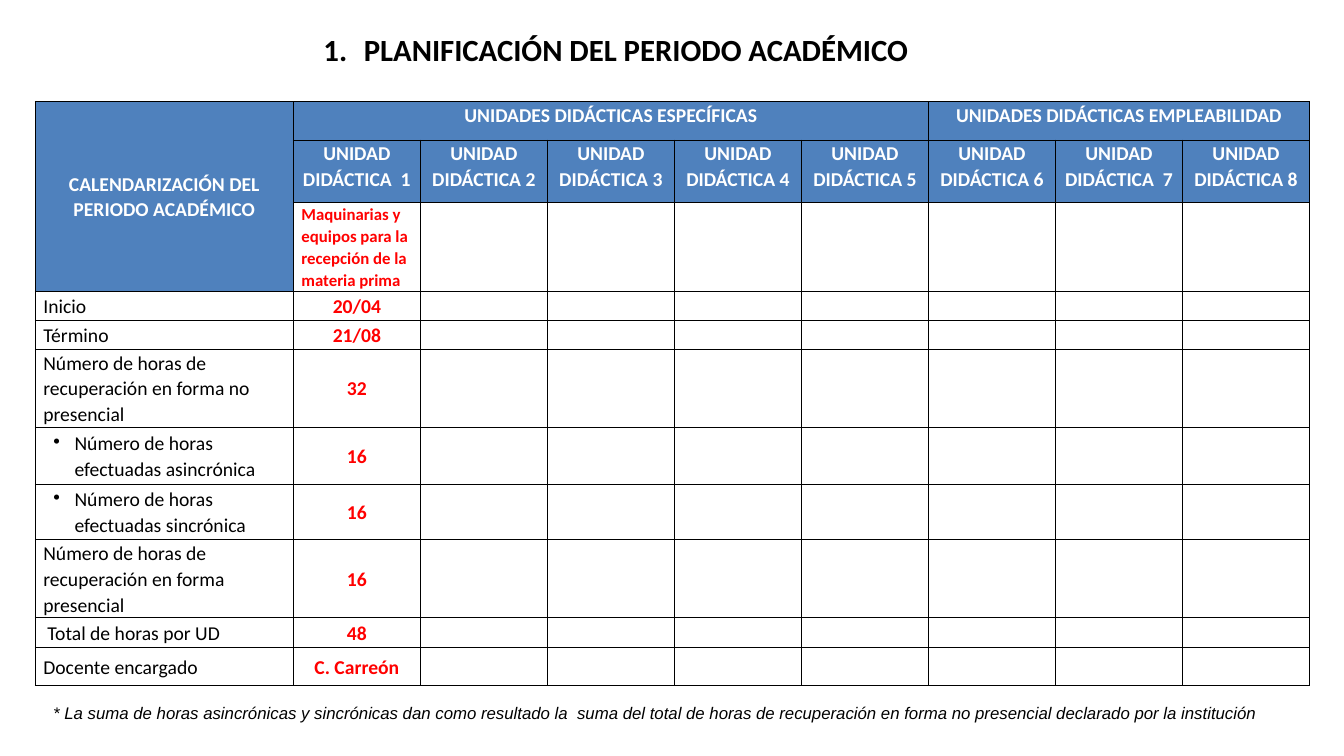
from dataclasses import dataclass
from typing import Optional

from lxml import etree
from pptx import Presentation
from pptx.dml.color import RGBColor
from pptx.enum.text import MSO_ANCHOR, PP_ALIGN
from pptx.oxml.ns import qn
from pptx.util import Inches, Pt

TOP, MIDDLE = MSO_ANCHOR.TOP, MSO_ANCHOR.MIDDLE
LEFT, CENTER, JUSTIFY = PP_ALIGN.LEFT, PP_ALIGN.CENTER, PP_ALIGN.JUSTIFY

COLORS = {"header": "4F81BD", "white": "FFFFFF", "black": "000000", "red": "FF0000"}
UNIT_COUNT = 8
SPECIFIC_COUNT = 5
HEADER_HEIGHTS = [0.38, 0.62, 0.87]
WIDE_GAP_UNITS = (1, 7)


@dataclass
class TextStyle:
    size: float = 14
    color: str = "black"
    bold: bool = False
    italic: bool = False
    font: str = "Calibri"
    align: Optional[PP_ALIGN] = LEFT
    spacing: float = 1.08


@dataclass
class Bullet:
    tag: str
    attribute: str
    value: str
    margin: float
    indent: float


@dataclass
class ScheduleRow:
    label: str
    value: str
    height: float
    align: PP_ALIGN = LEFT
    bullet: Optional[Bullet] = None
    margin: float = 0


@dataclass
class TextBox:
    text: str
    left: float
    top: float
    width: float
    height: float
    style: TextStyle
    anchor: MSO_ANCHOR
    bullet: Optional[Bullet] = None


HEADER = TextStyle(color="white", bold=True, align=CENTER)
VALUE = TextStyle(color="red", bold=True, align=CENTER)
COURSE = TextStyle(size=12, color="red", bold=True)
DOT = Bullet("a:buChar", "char", "•", 0.31, -0.21)
NUMBER = Bullet("a:buAutoNum", "type", "arabicPeriod", 0.5, -0.4)

SCHEDULE = [
    ScheduleRow("Inicio", "20/04", 0.29, JUSTIFY),
    ScheduleRow("Término", "21/08", 0.29, JUSTIFY),
    ScheduleRow("Número de horas de recuperación en forma no presencial", "32", 0.77),
    ScheduleRow("Número de horas efectuadas asincrónica", "16", 0.57, bullet=DOT),
    ScheduleRow("Número de horas efectuadas sincrónica", "16", 0.55, bullet=DOT),
    ScheduleRow("Número de horas de recuperación en forma presencial", "16", 0.77),
    ScheduleRow("Total de horas por UD", "48", 0.3, margin=0.04),
    ScheduleRow("Docente encargado", "C. Carreón", 0.37),
]

TEXT_BOXES = [
    TextBox("PLANIFICACIÓN DEL PERIODO ACADÉMICO", 3.01, 0.3, 7.31, 0.38,
            TextStyle(size=22, bold=True, spacing=1.0), MIDDLE, NUMBER),
    TextBox("* La suma de horas asincrónicas y sincrónicas dan como resultado la  suma del total "
            "de horas de recuperación en forma no presencial declarado por la institución",
            0.43, 6.84, 12.63, 0.38,
            TextStyle(size=12, italic=True, font="Arial", spacing=1.15), TOP),
]


def rgb(name: str) -> RGBColor:
    return RGBColor.from_string(COLORS[name])


def add_color(parent, name: str) -> None:
    etree.SubElement(parent, qn("a:srgbClr"), val=COLORS[name])


def write_text(frame, text: str, style: TextStyle, bullet: Optional[Bullet] = None) -> None:
    frame.text = text
    para = frame.paragraphs[0]
    para.alignment = style.align
    para.line_spacing = style.spacing
    if bullet:
        properties = para._p.get_or_add_pPr()
        properties.set("marL", str(Inches(bullet.margin)))
        properties.set("indent", str(Inches(bullet.indent)))
        add_color(etree.SubElement(properties, qn("a:buClr")), "black")
        etree.SubElement(properties, qn(bullet.tag), {bullet.attribute: bullet.value})
    for span in para.runs:
        span.font.name = style.font
        span.font.size = Pt(style.size)
        span.font.bold = style.bold
        span.font.italic = style.italic
        span.font.color.rgb = rgb(style.color)


def format_cell(cell, is_header: bool) -> None:
    cell.margin_left = cell.margin_right = Inches(0.08)
    cell.margin_top = cell.margin_bottom = 0
    properties = cell._tc.get_or_add_tcPr()
    for side in ("a:lnL", "a:lnR", "a:lnT", "a:lnB"):
        line = etree.SubElement(properties, qn(side), w=str(Pt(0.75)))
        add_color(etree.SubElement(line, qn("a:solidFill")), "black")
    if is_header:
        cell.fill.solid()
        cell.fill.fore_color.rgb = rgb("header")
    else:
        cell.fill.background()
    if not cell.text_frame.text:
        para = cell.text_frame.paragraphs[0]
        etree.SubElement(para._p, qn("a:endParaRPr"), sz="1200")


def fill_header(table) -> None:
    first_job = SPECIFIC_COUNT + 1
    table.cell(0, 0).merge(table.cell(2, 0))
    table.cell(0, 1).merge(table.cell(0, SPECIFIC_COUNT))
    table.cell(0, first_job).merge(table.cell(0, UNIT_COUNT))
    write_text(table.cell(0, 0).text_frame, "CALENDARIZACIÓN DEL PERIODO ACADÉMICO", HEADER)
    table.cell(0, 0).vertical_anchor = MIDDLE
    write_text(table.cell(0, 1).text_frame, "UNIDADES DIDÁCTICAS ESPECÍFICAS", HEADER)
    write_text(table.cell(0, first_job).text_frame, "UNIDADES DIDÁCTICAS EMPLEABILIDAD", HEADER)
    for unit in range(1, UNIT_COUNT + 1):
        gap = "  " if unit in WIDE_GAP_UNITS else " "
        write_text(table.cell(1, unit).text_frame, f"UNIDAD DIDÁCTICA{gap}{unit}", HEADER)
    course = table.cell(2, 1)
    write_text(course.text_frame, "Maquinarias y equipos para la recepción de la materia prima", COURSE)
    course.vertical_anchor = MIDDLE


def add_schedule(page) -> None:
    widths = [2.56] + [1.26] * UNIT_COUNT
    heights = HEADER_HEIGHTS + [row.height for row in SCHEDULE]
    table = page.shapes.add_table(len(heights), len(widths), Inches(0.35), Inches(1.01),
                                  Inches(sum(widths)), Inches(sum(heights))).table
    table.first_row = table.horz_banding = False
    for column, width in zip(table.columns, widths):
        column.width = Inches(width)
    for row, height in zip(table.rows, heights):
        row.height = Inches(height)

    fill_header(table)
    for index, item in enumerate(SCHEDULE, start=len(HEADER_HEIGHTS)):
        label, value = table.cell(index, 0), table.cell(index, 1)
        write_text(label.text_frame, item.label, TextStyle(align=item.align), item.bullet)
        write_text(value.text_frame, item.value, VALUE)
        label.vertical_anchor = value.vertical_anchor = MIDDLE

    for index, row in enumerate(table.rows):
        for column, cell in enumerate(row.cells):
            format_cell(cell, index < 2 or (index == 2 and column == 0))
    for index, item in enumerate(SCHEDULE, start=len(HEADER_HEIGHTS)):
        table.cell(index, 0).margin_left = Inches(0.08 + item.margin)


def add_text_box(page, item: TextBox) -> None:
    box = page.shapes.add_textbox(Inches(item.left), Inches(item.top),
                                  Inches(item.width), Inches(item.height))
    frame = box.text_frame
    frame.word_wrap = True
    frame.vertical_anchor = item.anchor
    frame.margin_left = frame.margin_right = Inches(0.1)
    frame.margin_top = frame.margin_bottom = Inches(0.1)
    write_text(frame, item.text, item.style, item.bullet)


def main() -> None:
    deck = Presentation()
    deck.slide_width, deck.slide_height = Inches(13.33), Inches(7.5)
    page = deck.slides.add_slide(deck.slide_layouts[6])
    add_schedule(page)
    for item in TEXT_BOXES:
        add_text_box(page, item)
    deck.save("out.pptx")


if __name__ == "__main__":
    main()
